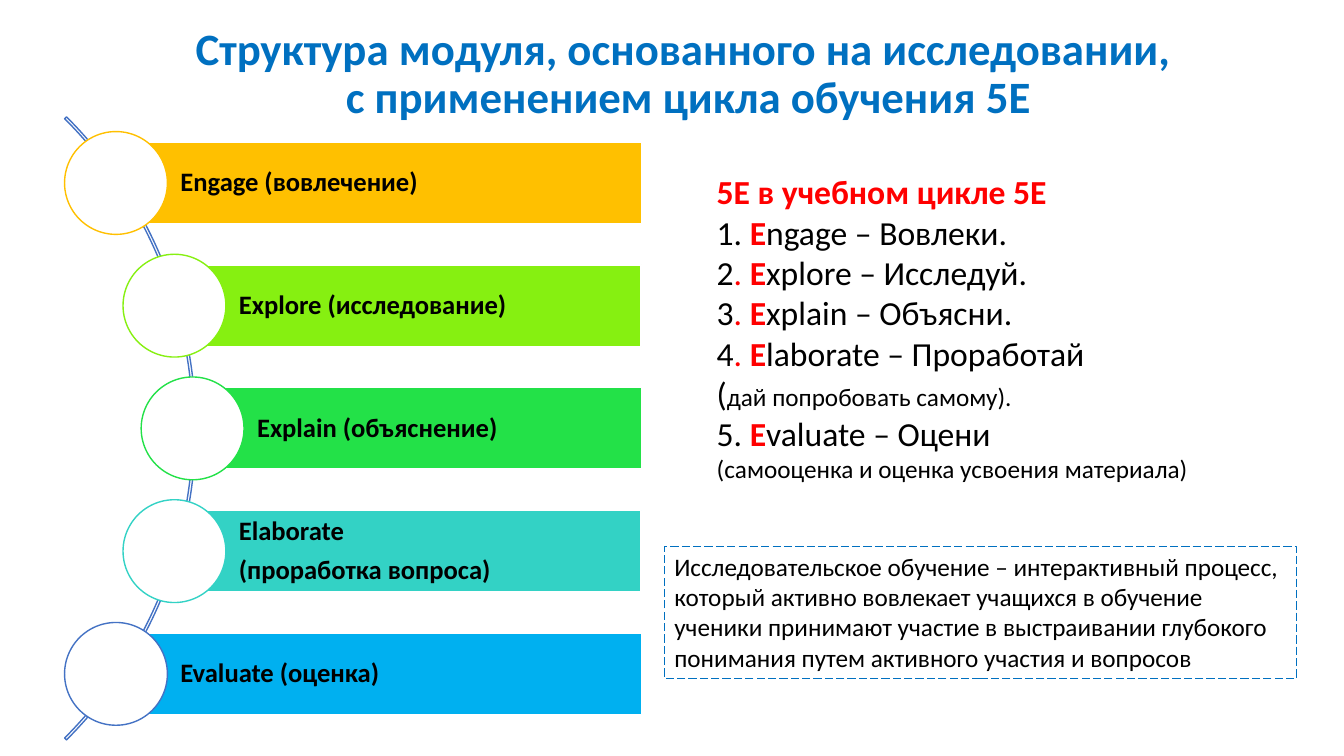
from dataclasses import dataclass
from typing import Optional

import pptx
import pptx.dml.color
import pptx.enum.dml
import pptx.enum.shapes
import pptx.enum.text
import pptx.util

Inches = pptx.util.Inches
Pt = pptx.util.Pt
Kind = pptx.enum.shapes.MSO_SHAPE
Align = pptx.enum.text.PP_ALIGN
Anchor = pptx.enum.text.MSO_ANCHOR

BLACK, WHITE, RED = "000000", "FFFFFF", "FF0000"
BLUE, NAVY = "0070C0", "4472C4"


@dataclass
class Run:
    """A stretch of text; unset fields follow the format of the whole text."""
    text: str
    size: Optional[float] = None
    color: Optional[str] = None
    bold: Optional[bool] = None


@dataclass
class Step:
    lines: list[str]
    left: float
    fill: str
    ring: str


STEPS = [
    Step(["Engage (вовлечение)"], 1.15, "FFC000", "FFC000"),
    Step(["Explore (исследование)"], 1.73, "86F011", "86F011"),
    Step(["Explain (объяснение)"], 1.91, "23E148", "23E148"),
    Step(["Elaborate", "(проработка вопроса)"], 1.73, "33D2C5", "33D2C5"),
    Step(["Evaluate (оценка)"], 1.15, "00B0F0", NAVY),
]
TOP, LAST = 1.41, 6.28
RIGHT = 6.36
TALL, DISC = 0.81, 1.02
PITCH = (LAST - TOP) / (len(STEPS) - 1)


def paint(color: str) -> pptx.dml.color.RGBColor:
    return pptx.dml.color.RGBColor.from_string(color)


def write(shape, paras: list, *, size: float, color: str = BLACK,
          bold: bool = False, align=Align.LEFT, anchor=Anchor.MIDDLE,
          lead: float = 1.0, after: float = 0,
          inset: tuple = (0.1, 0.05, 0.1, 0.05)) -> None:
    """Fill a shape with paragraphs, each a string or a list of runs."""
    frame = shape.text_frame
    frame.word_wrap = True
    frame.vertical_anchor = anchor
    (frame.margin_left, frame.margin_top,
     frame.margin_right, frame.margin_bottom) = map(Inches, inset)
    for i, runs in enumerate(paras):
        para = frame.add_paragraph() if i else frame.paragraphs[0]
        para.alignment = align
        para.line_spacing = lead
        para.space_after = Pt(after)
        for run in [Run(runs)] if isinstance(runs, str) else runs:
            if run.text == "\v":
                para.add_line_break()
                continue
            part = para.add_run()
            part.text = run.text
            part.font.name = "Calibri"
            part.font.size = Pt(run.size or size)
            part.font.bold = bold if run.bold is None else run.bold
            part.font.color.rgb = paint(run.color or color)


def draw(slide, kind, box: tuple, *, fill: Optional[str] = None,
         line: Optional[str] = None, width: float = 1):
    shape = slide.shapes.add_shape(kind, *map(Inches, box))
    shape.shadow.inherit = False
    if fill:
        shape.fill.solid()
        shape.fill.fore_color.rgb = paint(fill)
    else:
        shape.fill.background()
    if line:
        shape.line.color.rgb = paint(line)
        shape.line.width = Pt(width)
    else:
        shape.line.fill.background()
    return shape


def draw_step(slide, step: Step, top: float) -> None:
    bar = draw(slide, Kind.RECTANGLE, (step.left, top, RIGHT - step.left, TALL),
               fill=step.fill, line=WHITE)
    write(bar, step.lines, size=19, bold=True, lead=0.9, after=7,
          inset=(0.64, 0.05, 0.05, 0.05))
    draw(slide, Kind.OVAL,
         (step.left - DISC / 2, top + (TALL - DISC) / 2, DISC, DISC),
         fill=WHITE, line=step.ring)


def item(num: int, rest: str, dot: str = RED) -> list[Run]:
    """One numbered line with a red initial E."""
    return [Run(str(num)), Run(". ", color=dot),
            Run("E", color=RED, bold=True), Run(rest)]


def main() -> None:
    deck = pptx.Presentation()
    deck.slide_width, deck.slide_height = Inches(13.33), Inches(7.5)
    slide = deck.slides.add_slide(deck.slide_layouts[6])

    title = slide.shapes.add_textbox(*map(Inches, (1.36, -0.56, 10.94, 2.61)))
    write(title, [[Run("Структура модуля, основанного на исследовании, "),
                   Run("\v"), Run("с применением цикла обучения 5E")]],
          size=32, color=BLUE, bold=True, align=Align.CENTER, lead=0.9)

    arc = draw(slide, Kind.BLOCK_ARC, (-6.8, -0.12, 8.74, 8.74), line=NAVY)
    for i, value in enumerate((189, 27, 0.003)):
        arc.adjustments[i] = value
    for i, step in enumerate(STEPS):
        draw_step(slide, step, TOP + i * PITCH)

    cycle = draw(slide, Kind.RECTANGLE, (7.01, 1.43, 5.44, 3.64), fill=WHITE)
    write(cycle, [
        [Run("5E в учебном цикле 5E", color=RED, bold=True)],
        item(1, "ngage – Вовлеки.", BLACK),
        item(2, "xplore – Исследуй."),
        item(3, "xplain – Объясни."),
        item(4, "laborate – Проработай"),
        [Run("("), Run("дай попробовать самому).", size=18)],
        item(5, "valuate – Оцени", BLACK),
        [Run("(самооценка и оценка усвоения материала)", size=18)],
    ], size=24)

    note = draw(slide, Kind.RECTANGLE, (6.59, 5.42, 6.27, 1.31),
                line=BLUE, width=0.75)
    note.line.dash_style = pptx.enum.dml.MSO_LINE.LONG_DASH
    write(note, [
        "Исследовательское обучение – интерактивный процесс, "
        "который активно вовлекает учащихся в обучение",
        "ученики принимают участие в выстраивании глубокого "
        "понимания путем активного участия и вопросов",
    ], size=18, anchor=Anchor.TOP)
    note.text_frame.auto_size = pptx.enum.text.MSO_AUTO_SIZE.SHAPE_TO_FIT_TEXT

    deck.save("out.pptx")


if __name__ == "__main__":
    main()
